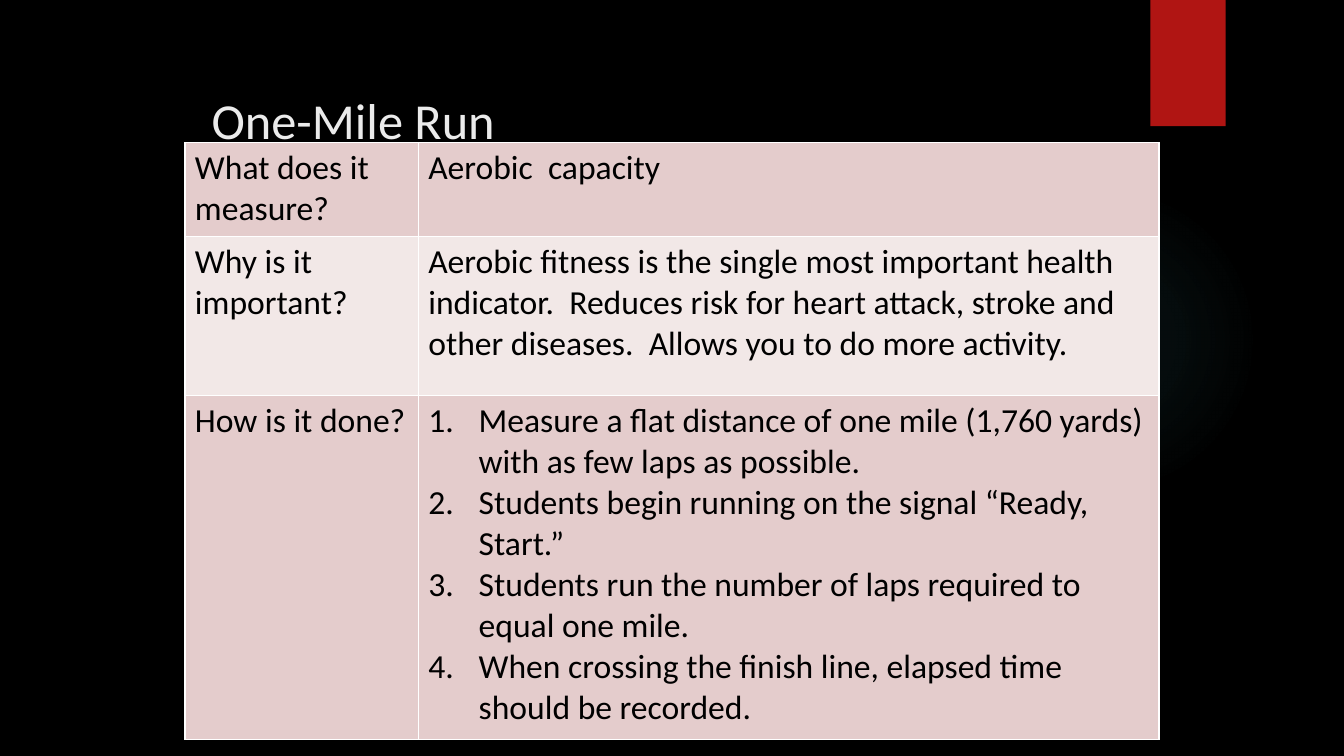
from pptx import Presentation
from pptx.dml.color import RGBColor
from pptx.enum.shapes import MSO_SHAPE
from pptx.enum.text import MSO_ANCHOR, MSO_AUTO_SIZE, PP_ALIGN
from pptx.oxml import parse_xml
from pptx.oxml.ns import nsdecls
from pptx.util import Cm, Pt

BLACK = RGBColor(0x00, 0x00, 0x00)
WHITE = RGBColor(0xFF, 0xFF, 0xFF)
PALE = RGBColor(0xEB, 0xEB, 0xEB)
RED = RGBColor(0xB0, 0x15, 0x13)
TEAL = RGBColor(0x50, 0xB9, 0xC1)
ROSE = RGBColor(0xE4, 0xCC, 0xCC)
BLUSH = RGBColor(0xF2, 0xE8, 0xE7)
FONT = "Calibri"

deck = Presentation()
deck.slide_width, deck.slide_height = Cm(33.87), Cm(19.05)
slide = deck.slides.add_slide(deck.slide_layouts[5])
slide.background.fill.solid()
slide.background.fill.fore_color.rgb = BLACK

# Backdrop: soft glow and red tab
glow = slide.shapes.add_shape(MSO_SHAPE.OVAL, Cm(23.9), Cm(4.65), Cm(7.82), Cm(7.82))
tab = slide.shapes.add_shape(MSO_SHAPE.RECTANGLE, Cm(28.99), 0, Cm(1.9), Cm(3.18))
for shape in (glow, tab):
    shape.shadow.inherit = False
    shape.line.fill.background()
tab.fill.solid()
tab.fill.fore_color.rgb = RED

stops = "".join(
    f'<a:gs pos="{spot * 1000}"><a:srgbClr val="{TEAL}">'
    f'<a:alpha val="{alpha * 1000}"/></a:srgbClr></a:gs>'
    for spot, alpha in ((0, 7), (36, 6), (69, 0), (100, 0))
)
glow.element.spPr.insert(2, parse_xml(
    f'<a:gradFill {nsdecls("a")}><a:gsLst>{stops}</a:gsLst><a:path path="circle">'
    '<a:fillToRect l="50000" t="50000" r="50000" b="50000"/></a:path></a:gradFill>'
))

# Title
title = slide.shapes.title
title.left, title.top, title.width, title.height = Cm(5.08), Cm(2.12), Cm(20.62), Cm(1.7)
frame = title.text_frame
frame.text = "One-Mile Run"
frame.auto_size = MSO_AUTO_SIZE.NONE
frame.vertical_anchor = MSO_ANCHOR.TOP
head = frame.paragraphs[0]
head.alignment = PP_ALIGN.LEFT
head.font.name, head.font.size = FONT, Pt(36)
head.font.color.rgb = PALE

# Table of questions and answers
STEPS = [
    "Measure a flat distance of one mile (1,760 yards) with as few laps as possible.",
    "Students begin running on the signal “Ready, Start.”",
    "Students run the number of laps required to equal one mile.",
    "When crossing the finish line, elapsed time should be recorded.",
]
ROWS = [
    ("What does it measure?", "Aerobic  capacity", 2.36, ROSE),
    ("Why is it important?",
     "Aerobic fitness is the single most important health indicator.  Reduces risk for "
     "heart attack, stroke and other diseases.  Allows you to do more activity.", 4.01, BLUSH),
    ("How is it done?", "\n".join(STEPS), 8.66, ROSE),
]
grid = slide.shapes.add_table(3, 2, Cm(4.66), Cm(3.6), Cm(24.55), Cm(15.03)).table
grid.first_row = grid.horz_banding = False
grid.columns[0].width, grid.columns[1].width = Cm(5.88), Cm(18.67)

for row, (ask, reply, height, shade) in enumerate(ROWS):
    grid.rows[row].height = Cm(height)
    for col, words in enumerate((ask, reply)):
        cell = grid.cell(row, col)
        cell.text_frame.text = words
        props = cell._tc.get_or_add_tcPr()
        for side in "LRTB":
            props.append(parse_xml(
                f'<a:ln{side} {nsdecls("a")} w="{Pt(1)}"><a:solidFill>'
                f'<a:srgbClr val="{WHITE}"/></a:solidFill></a:ln{side}>'
            ))
        cell.fill.solid()
        cell.fill.fore_color.rgb = shade
        for para in cell.text_frame.paragraphs:
            if words == "\n".join(STEPS):
                form = para._p.get_or_add_pPr()
                form.set("marL", str(Cm(1.27)))
                form.set("indent", str(-Cm(1.27)))
                form.append(parse_xml(f'<a:buAutoNum {nsdecls("a")} type="arabicPeriod"/>'))
            for run in para.runs:
                run.font.name, run.font.size = FONT, Pt(24)
                run.font.color.rgb = BLACK

deck.save("out.pptx")
